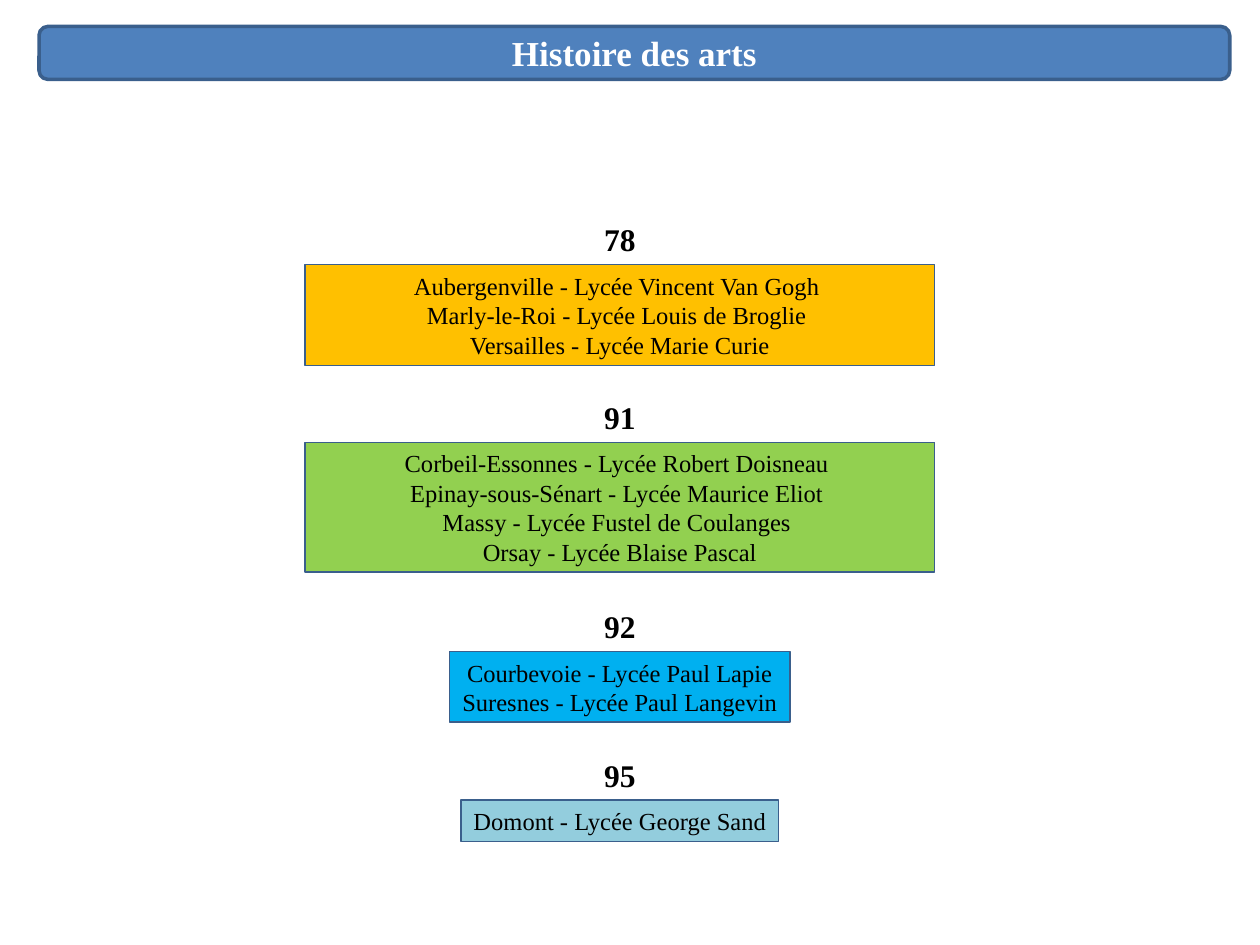
from pptx import Presentation
from pptx.dml.color import RGBColor
from pptx.enum import shapes, text
from pptx.util import Inches, Pt

FONT = "Times New Roman"
WHITE = RGBColor(0xFF, 0xFF, 0xFF)
BLACK = RGBColor(0x00, 0x00, 0x00)
BLUE = RGBColor(0x4F, 0x81, 0xBD)
OUTLINE = RGBColor(0x3A, 0x5F, 0x8C)
ORANGE = RGBColor(0xFF, 0xC0, 0x00)
GREEN = RGBColor(0x92, 0xD0, 0x50)
SKY = RGBColor(0x00, 0xB0, 0xF0)
PALE_BLUE = RGBColor(0x93, 0xCD, 0xDD)

CENTER_X = 4.92
NUMBER_WIDTH, NUMBER_HEIGHT = 0.94, 0.4

DEPARTMENTS = [
    ("78", 2.1, 5, 0.8, ORANGE, True, [
        "Aubergenville - Lycée Vincent Van Gogh ",
        "Marly-le-Roi - Lycée Louis de Broglie ",
        "Versailles - Lycée Marie Curie",
    ]),
    ("91", 3.51, 5, 1.03, GREEN, True, [
        "Corbeil-Essonnes - Lycée Robert Doisneau ",
        "Epinay-sous-Sénart - Lycée Maurice Eliot ",
        "Massy - Lycée Fustel de Coulanges ",
        "Orsay - Lycée Blaise Pascal",
    ]),
    ("92", 5.17, 2.7, 0.56, SKY, False, [
        "Courbevoie - Lycée Paul Lapie",
        "Suresnes - Lycée Paul Langevin",
    ]),
    ("95", 6.35, 2.52, 0.33, PALE_BLUE, False, [
        "Domont - Lycée George Sand",
    ]),
]


def write(frame, lines, size, color=BLACK, bold=False, wrap=True,
          anchor=text.MSO_ANCHOR.TOP):
    frame.word_wrap = wrap
    frame.vertical_anchor = anchor
    for index, line in enumerate(lines):
        paragraph = frame.paragraphs[0] if index == 0 else frame.add_paragraph()
        paragraph.alignment = text.PP_ALIGN.CENTER
        run = paragraph.add_run()
        run.text = line
        run.font.name = FONT
        run.font.size = Pt(size)
        run.font.bold = bold
        run.font.color.rgb = color


def add_panel(slide, kind, left, top, width, height, fill, line_width):
    panel = slide.shapes.add_shape(
        kind, Inches(left), Inches(top), Inches(width), Inches(height))
    panel.shadow.inherit = False
    panel.fill.solid()
    panel.fill.fore_color.rgb = fill
    panel.line.color.rgb = OUTLINE
    panel.line.width = Pt(line_width)
    return panel


def add_title(slide, title):
    banner = add_panel(slide, shapes.MSO_SHAPE.ROUNDED_RECTANGLE,
                       0.31, 0.21, 9.45, 0.42, BLUE, 2)
    write(banner.text_frame, [title], 20, color=WHITE, bold=True,
          anchor=text.MSO_ANCHOR.MIDDLE)


def add_department(slide, number, top, width, height, fill, wrap, schools):
    school_list = add_panel(slide, shapes.MSO_SHAPE.RECTANGLE,
                            CENTER_X - width / 2, top, width, height, fill, 0.75)
    write(school_list.text_frame, schools, 14, wrap=wrap)
    heading = slide.shapes.add_textbox(
        Inches(CENTER_X - NUMBER_WIDTH / 2), Inches(top - NUMBER_HEIGHT),
        Inches(NUMBER_WIDTH), Inches(NUMBER_HEIGHT))
    write(heading.text_frame, [number], 18, bold=True)


def main():
    deck = Presentation()
    deck.slide_width, deck.slide_height = Inches(10), Inches(7.5)
    slide = deck.slides.add_slide(deck.slide_layouts[6])
    add_title(slide, "Histoire des arts")
    for department in DEPARTMENTS:
        add_department(slide, *department)
    deck.save("out.pptx")


if __name__ == "__main__":
    main()
